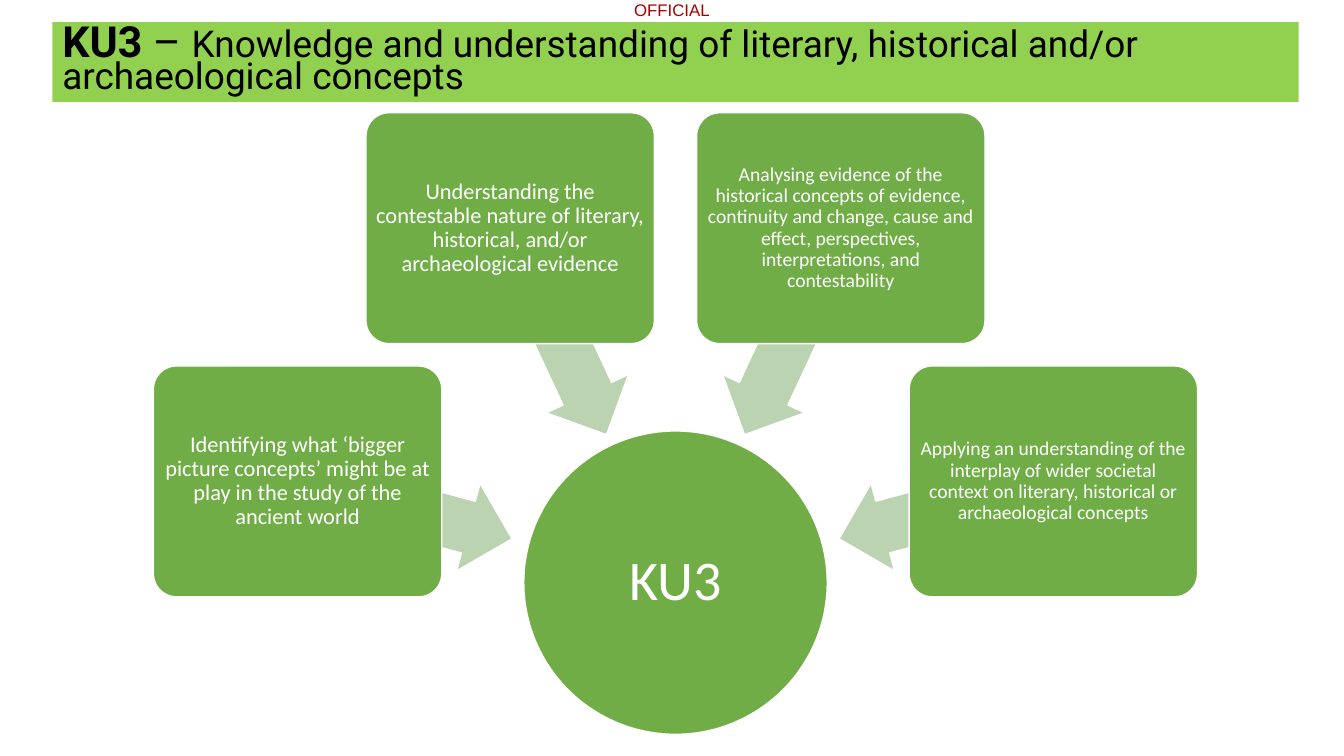
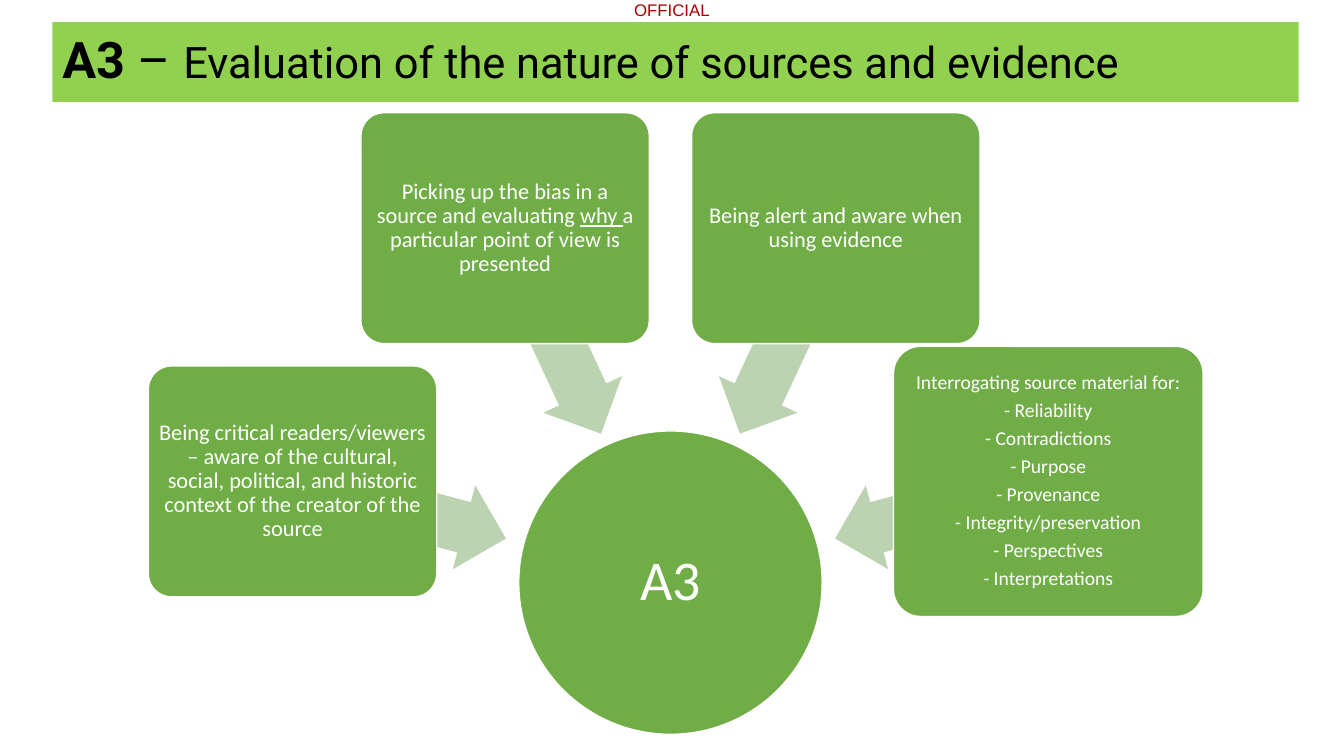
"""Builds two slides of ideas that point to a central hub."""
from math import cos, radians, sin

from pptx import Presentation
from pptx.dml.color import RGBColor
from pptx.enum.shapes import MSO_SHAPE
from pptx.enum.text import MSO_ANCHOR, PP_ALIGN
from pptx.util import Inches, Pt

RECT, OVAL = MSO_SHAPE.RECTANGLE, MSO_SHAPE.OVAL
ROUND, ARROW = MSO_SHAPE.ROUNDED_RECTANGLE, MSO_SHAPE.LEFT_ARROW
MIDDLE, CENTER, LEFT = MSO_ANCHOR.MIDDLE, PP_ALIGN.CENTER, PP_ALIGN.LEFT

COLORS = {"band": "92D050", "box": "70AD47", "arrow": "BBD3B1",
          "white": "FFFFFF", "black": "000000", "mark": "A80000"}
BOX, BIG = (2.86, 2.29), (3.07, 2.68)
HUB_Y, HUB_SIZE, REACH = 5.78, 3.01, 3.88
SPOKES = [(195, 2.81), (245, 2.75), (295, 2.75), (345, 2.81)]

SLIDES = [
    {"code": "KU3", "hub_x": 6.7, "sizes": (30.6, 26.4), "pitch": 0.7,
     "title": "Knowledge and understanding of literary, historical and/or "
              "archaeological concepts",
     "boxes": [
         (16, BOX, ["Identifying what ‘bigger picture concepts’ might be at "
                    "play in the study of the ancient world"]),
         (16, BOX, ["Understanding the contestable nature of literary, "
                    "historical, and/or archaeological evidence"]),
         (14, BOX, ["Analysing evidence of the historical concepts of "
                    "evidence, continuity and change, cause and effect, "
                    "perspectives, interpretations, and contestability"]),
         (14, BOX, ["Applying an understanding of the interplay of wider "
                    "societal context on literary, historical or "
                    "archaeological concepts"])]},
    {"code": "A3", "hub_x": 6.65, "sizes": (36, 31), "pitch": 0.9,
     "title": "Evaluation of the nature of sources and evidence",
     "boxes": [
         (16, BOX, ["Being critical readers/viewers – aware of the cultural, "
                    "social, political, and historic context of the creator "
                    "of the source"]),
         (16, BOX, ["Picking up the bias in a source and evaluating _why _a "
                    "particular point of view is presented"]),
         (16, BOX, ["Being alert and aware when using evidence"]),
         (14, BIG, ["Interrogating source material for:", "- Reliability",
                    "- Contradictions", "- Purpose", "- Provenance",
                    "- Integrity/preservation", "- Perspectives",
                    "- Interpretations"])]},
]


def color(name):
    return RGBColor.from_string(COLORS[name])


def style(para, font, ink, size=None):
    para.font.name = font
    para.font.color.rgb = color(ink)
    if size:
        para.font.size = Pt(size)


def inset(frame, gap):
    frame.margin_left = frame.margin_right = Inches(gap)
    frame.margin_top = frame.margin_bottom = Inches(gap)


def add_part(slide, kind, mid, size, fill, line=None):
    (x, y), (w, h) = mid, size
    part = slide.shapes.add_shape(kind, Inches(x - w / 2), Inches(y - h / 2),
                                  Inches(w), Inches(h))
    part.shadow.inherit = False
    part.fill.solid()
    part.fill.fore_color.rgb = color(fill)
    if line:
        part.line.color.rgb = color(line)
        part.line.width = Pt(1)
    else:
        part.line.fill.background()
    return part


def write(part, lines, size):
    """Fills a part with centred lines; text between underscores is underlined."""
    frame = part.text_frame
    frame.word_wrap = True
    frame.vertical_anchor = MIDDLE
    inset(frame, 0.03)
    for i, line in enumerate(lines):
        para = frame.add_paragraph() if i else frame.paragraphs[0]
        style(para, "Calibri", "white", size)
        para.alignment = CENTER
        para.line_spacing = 0.9
        para.space_after = Pt(size * 0.35)
        for j, text in enumerate(line.split("_")):
            run = para.add_run()
            run.text = text
            if j % 2:
                run.font.underline = True


def add_mark(slide):
    box = slide.shapes.add_textbox(Inches(6.29), 0, Inches(0.8), Inches(0.2))
    inset(box.text_frame, 0)
    para = box.text_frame.paragraphs[0]
    para.text = "OFFICIAL"
    style(para, "Arial", "mark", 12)


def add_title(slide, data):
    band = add_part(slide, RECT, (6.7, 0.615), (12.36, 0.79), "band")
    frame = band.text_frame
    frame.word_wrap = True
    frame.vertical_anchor = MIDDLE
    para = frame.paragraphs[0]
    style(para, "Roboto", "black")
    para.alignment = LEFT
    para.line_spacing = data["pitch"]
    large, small = data["sizes"]
    for text, size, bold in [(data["code"] + " ", large, True),
                             ("– ", large, False),
                             (data["title"], small, False)]:
        run = para.add_run()
        run.text = text
        run.font.size = Pt(size)
        run.font.bold = bold


def add_wheel(slide, data):
    def spot(angle, dist):
        turn = radians(angle)
        return data["hub_x"] + dist * cos(turn), HUB_Y + dist * sin(turn)

    hub = add_part(slide, OVAL, spot(0, 0), (HUB_SIZE, HUB_SIZE), "box", "white")
    write(hub, [data["code"]], 40)
    for (angle, dist), (size, area, lines) in zip(SPOKES, data["boxes"]):
        arrow = add_part(slide, ARROW, spot(angle, dist), (2.24, 0.86), "arrow")
        arrow.adjustments[0] = 0.6
        arrow.adjustments[1] = 0.5
        arrow.rotation = angle
        box = add_part(slide, ROUND, spot(angle, REACH), area, "box", "white")
        box.adjustments[0] = 0.1
        write(box, lines, size)


def main():
    deck = Presentation()
    deck.slide_width, deck.slide_height = Inches(13.33), Inches(7.5)
    for data in SLIDES:
        slide = deck.slides.add_slide(deck.slide_layouts[6])
        add_mark(slide)
        add_title(slide, data)
        add_wheel(slide, data)
    deck.save("out.pptx")


if __name__ == "__main__":
    main()
